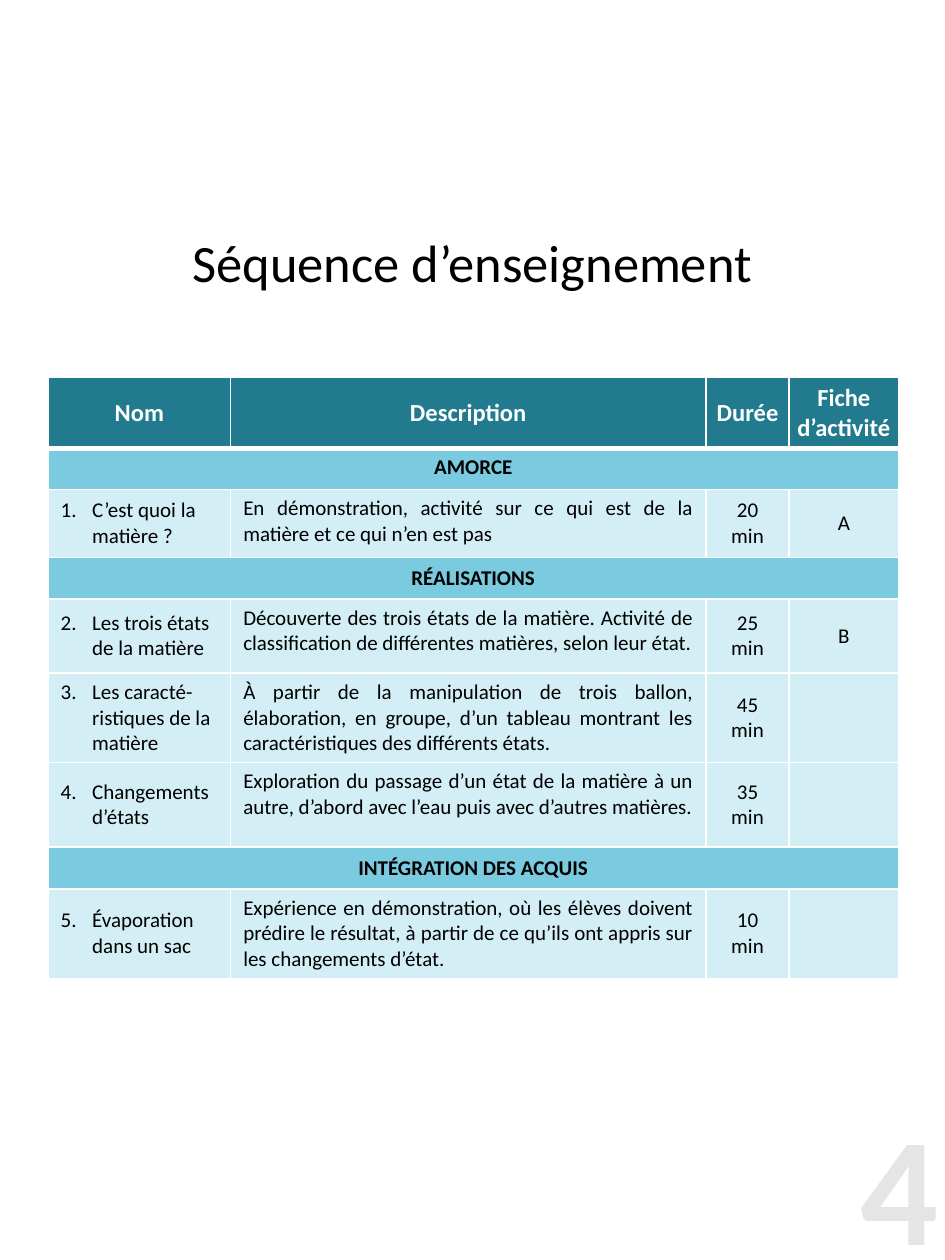
import pptx
import pptx.util
import pptx.dml.color
import pptx.enum.text
import pptx.oxml
import pptx.oxml.ns

Cm, Pt = pptx.util.Cm, pptx.util.Pt
ALIGN = pptx.enum.text.PP_ALIGN
ANCHOR = pptx.enum.text.MSO_ANCHOR
COLOURS = {"header": "227A8F", "section": "7ACBE0", "activity": "D3EEF5",
           "white": "FFFFFF", "black": "000000", "number": "E5E5E5"}

COLUMN_WIDTHS = [3.68, 9.58, 1.68, 2.2]
ROW_HEIGHTS = [1.43, 0.83, 1.37, 0.83, 1.5, 1.8, 1.7, 0.85, 1.8]
HEADERS = ["Nom", "Description", "Durée", "Fiche d’activité"]

# A string is a section heading; a tuple is one activity
SEQUENCE = [
    "AMORCE",
    ("C’est quoi la matière ?",
     "En démonstration, activité sur ce qui est de la matière et ce qui n’en est pas",
     "20 min", "A"),
    "RÉALISATIONS",
    ("Les trois états de la matière",
     "Découverte des trois états de la matière. Activité de classification de "
     "différentes matières, selon leur état.", "25 min", "B"),
    ("Les caracté-ristiques de la matière",
     "À partir de la manipulation de trois ballon, élaboration, en groupe, d’un "
     "tableau montrant les caractéristiques des différents états.", "45\nmin", ""),
    ("Changements d’états",
     "Exploration du passage d’un état de la matière à un autre, d’abord avec "
     "l’eau puis avec d’autres matières.", "35 min", ""),
    "INTÉGRATION DES ACQUIS",
    ("Évaporation dans un sac",
     "Expérience en démonstration, où les élèves doivent prédire le résultat, à "
     "partir de ce qu’ils ont appris sur les changements d’état.", "10\nmin", ""),
]


class SlideBuilder:
    def __init__(self, slide, font="Calibri"):
        self.slide = slide
        self.font = font

    def fill_text(self, frame, text, size, colour="black", bold=False,
                  align=ALIGN.CENTER, number=None):
        frame.text = text
        for paragraph in frame.paragraphs:
            paragraph.alignment = align
            if number:
                self.number(paragraph, number)
            font = paragraph.font
            font.name, font.size, font.bold = self.font, Pt(size), bold
            font.color.rgb = pptx.dml.color.RGBColor.from_string(COLOURS[colour])

    def number(self, paragraph, start):
        properties = paragraph._p.get_or_add_pPr()
        properties.set("marL", str(Cm(0.635)))
        properties.set("indent", str(-Cm(0.635)))
        properties.append(pptx.oxml.parse_xml(
            f'<a:buAutoNum {pptx.oxml.ns.nsdecls("a")} type="arabicPeriod" '
            f'startAt="{start}"/>'))

    def text(self, left, top, width, height, text, size, anchor, **style):
        box = self.slide.shapes.add_textbox(Cm(left), Cm(top), Cm(width), Cm(height))
        frame = box.text_frame
        frame.word_wrap = True
        frame.vertical_anchor = anchor
        frame.margin_left = frame.margin_right = 0
        frame.margin_top = frame.margin_bottom = 0
        self.fill_text(frame, text, size, **style)

    def table(self, left, top, widths, heights):
        table = self.slide.shapes.add_table(
            len(heights), len(widths), Cm(left), Cm(top),
            Cm(sum(widths)), Cm(sum(heights))).table
        table.horz_banding = table.first_row = False
        for column, width in zip(table.columns, widths):
            column.width = Cm(width)
        for row, height in zip(table.rows, heights):
            row.height = Cm(height)
        return table

    def cell(self, cell, text, fill, size=12, anchor=ANCHOR.MIDDLE,
             top_line=1, bottom_line=1, **style):
        self.fill_text(cell.text_frame, text, size, **style)
        cell.vertical_anchor = anchor
        # Borders come before the fill in the cell properties
        properties = cell._tc.get_or_add_tcPr()
        for side, width in zip("LRTB", (1, 1, top_line, bottom_line)):
            properties.append(pptx.oxml.parse_xml(
                f'<a:ln{side} {pptx.oxml.ns.nsdecls("a")} w="{Pt(width)}"><a:solidFill>'
                f'<a:srgbClr val="{COLOURS["white"]}"/></a:solidFill></a:ln{side}>'))
        cell.fill.solid()
        cell.fill.fore_color.rgb = pptx.dml.color.RGBColor.from_string(COLOURS[fill])


def main():
    presentation = pptx.Presentation()
    presentation.slide_width, presentation.slide_height = Cm(19.05), Cm(25.4)
    builder = SlideBuilder(presentation.slides.add_slide(presentation.slide_layouts[6]))

    # Title and page number
    builder.text(3.1, 4.3, 12.85, 1.93, "Séquence d’enseignement", 30, ANCHOR.MIDDLE)
    builder.text(17.2, 22, 1.85, 3.4, "4", 88, ANCHOR.TOP, colour="number", bold=True)

    # Table header
    plan = builder.table(0.97, 7.6, COLUMN_WIDTHS, ROW_HEIGHTS)
    for column, header in enumerate(HEADERS):
        cell = plan.cell(0, column)
        builder.cell(cell, header, "header", 14, bottom_line=3, colour="white", bold=True)
        if column >= 2:
            cell.margin_left = cell.margin_right = Cm(0.1)

    # Sections and numbered activities
    activity_number = 0
    for row, entry in enumerate(SEQUENCE, start=1):
        top_line = 3 if row == 1 else 1
        if isinstance(entry, str):
            anchor = ANCHOR.TOP if row == 1 else ANCHOR.MIDDLE
            for column, text in enumerate([entry, "", "", ""]):
                builder.cell(plan.cell(row, column), text, "section", anchor=anchor,
                             top_line=top_line, bold=True)
            plan.cell(row, 0).merge(plan.cell(row, 3))
            continue
        activity_number += 1
        name, description, duration, sheet = entry
        builder.cell(plan.cell(row, 0), name, "activity", align=ALIGN.LEFT,
                     number=activity_number)
        builder.cell(plan.cell(row, 1), description, "activity", anchor=ANCHOR.TOP,
                     align=ALIGN.JUSTIFY)
        builder.cell(plan.cell(row, 2), duration, "activity")
        builder.cell(plan.cell(row, 3), sheet, "activity")

    presentation.save("out.pptx")


if __name__ == "__main__":
    main()
